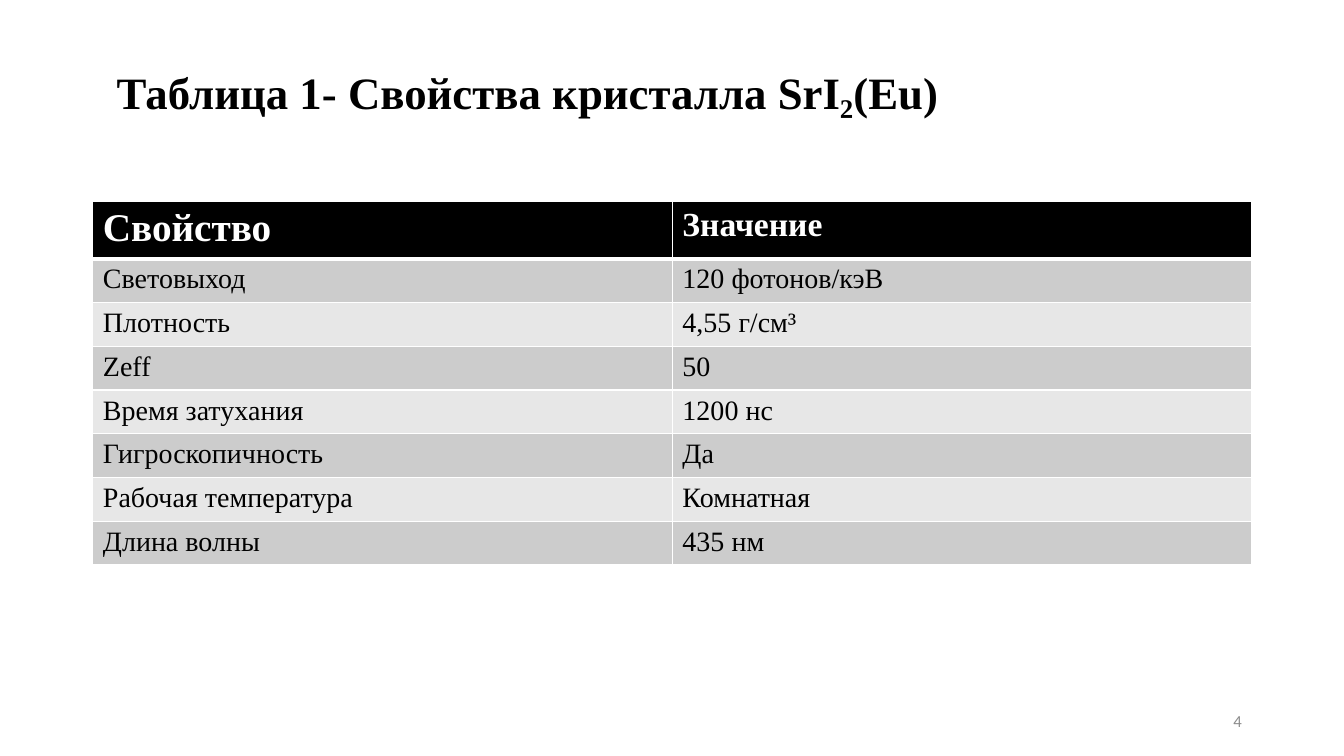
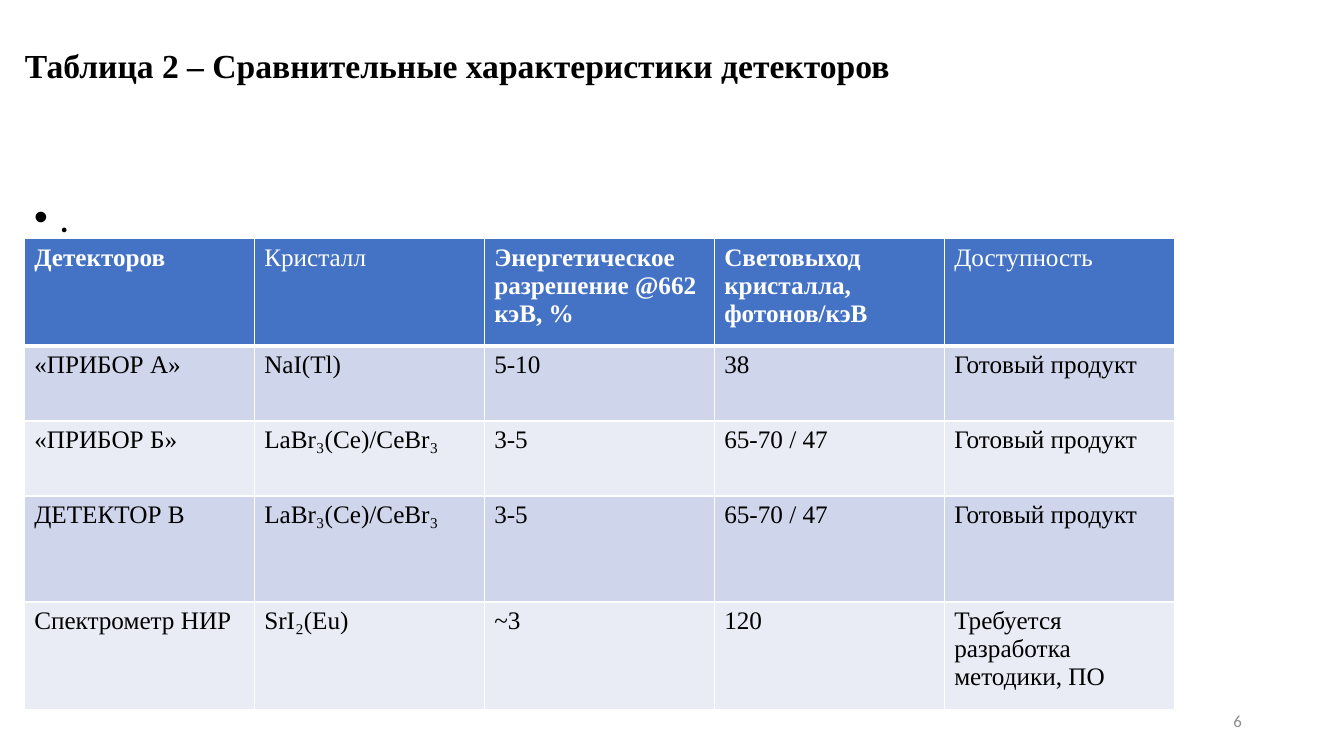
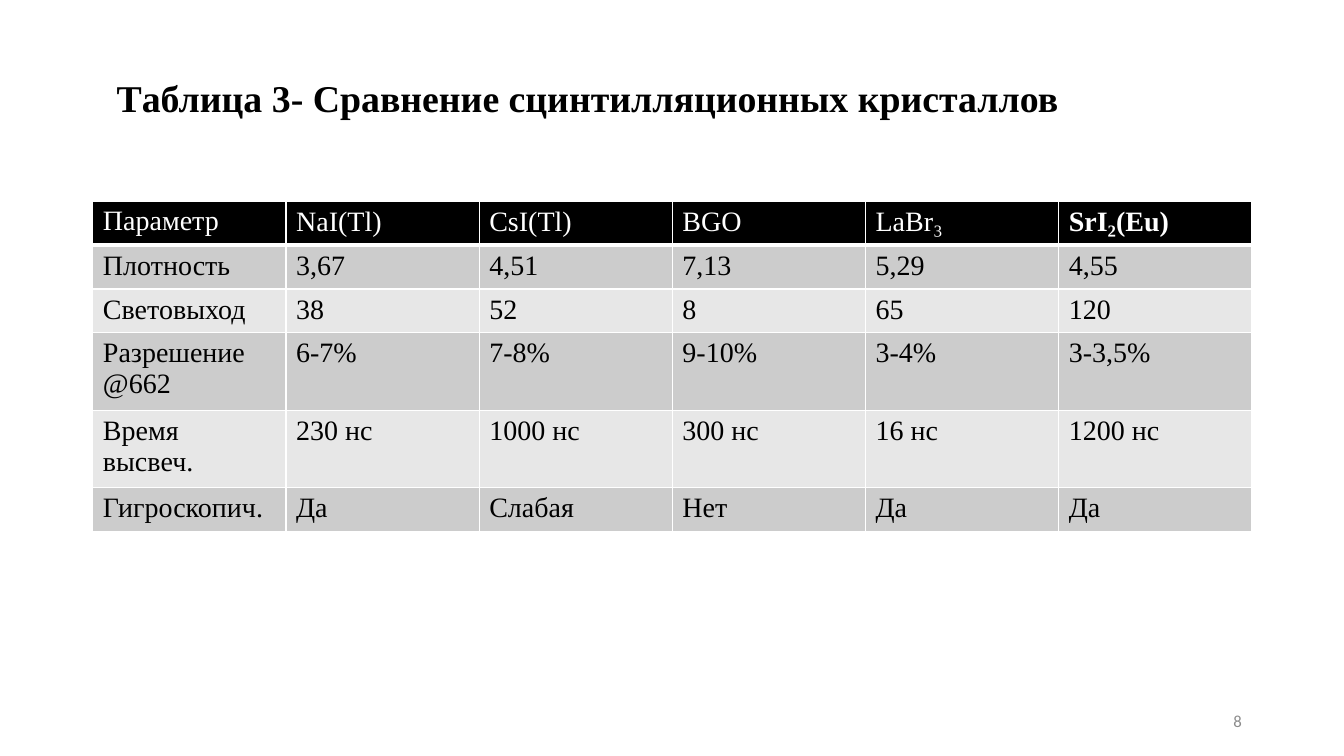
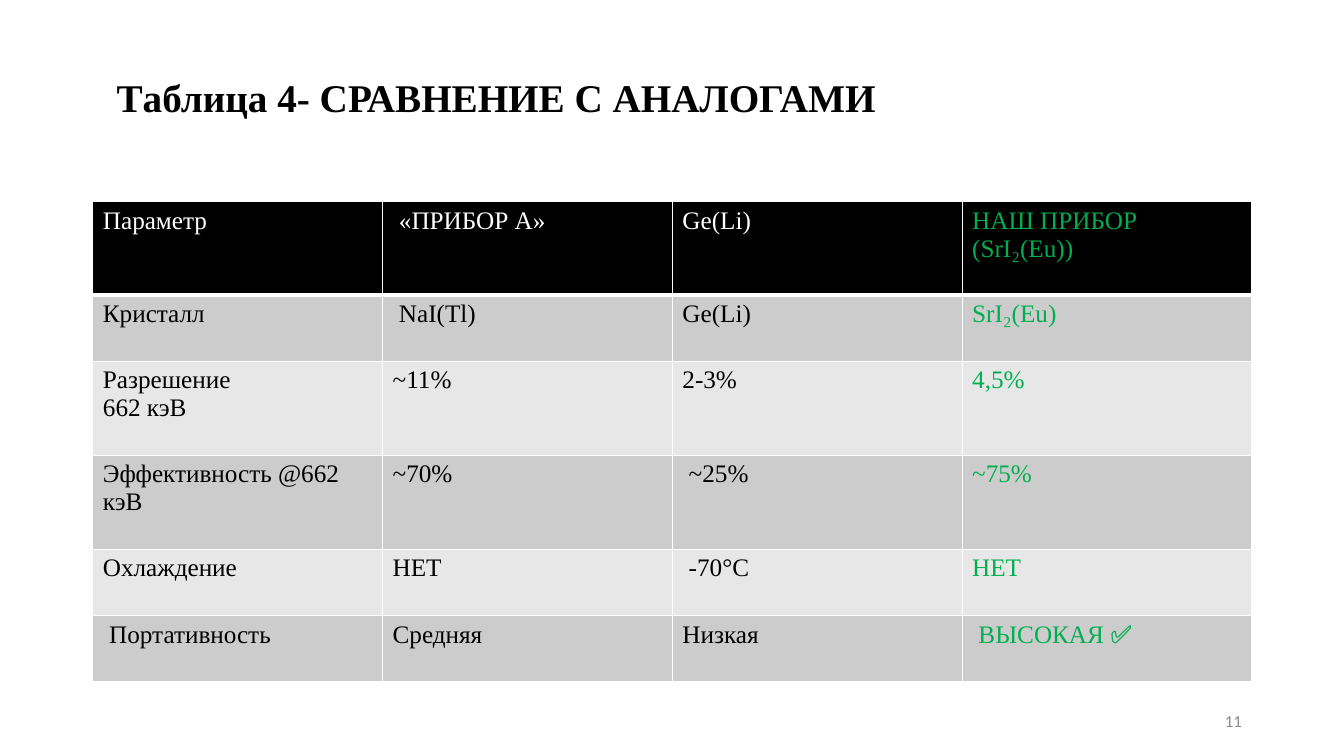
from dataclasses import dataclass

from lxml import etree
from pptx import Presentation
from pptx.dml.color import RGBColor
from pptx.enum.text import MSO_ANCHOR, PP_ALIGN
from pptx.oxml.ns import qn
from pptx.util import Cm, Pt

MIDDLE = MSO_ANCHOR.MIDDLE
TOP = MSO_ANCHOR.TOP
RIGHT = PP_ALIGN.RIGHT
BLANK_LAYOUT = 6


@dataclass(frozen=True)
class Theme:
    serif: str = "Times New Roman"
    sans: str = "Calibri"
    ink: str = "000000"
    paper: str = "FFFFFF"
    muted: str = "8C8C8C"
    accent: str = "00B050"
    body_size: int = 28
    number_size: int = 12
    thin_line: int = 1
    header_line: int = 3


@dataclass(frozen=True)
class Palette:
    header: str
    odd: str
    even: str


@dataclass(frozen=True)
class Box:
    left: float
    top: float
    width: float
    height: float

    def lengths(self):
        return Cm(self.left), Cm(self.top), Cm(self.width), Cm(self.height)


@dataclass(frozen=True)
class TableDesign:
    palette: Palette
    size: int
    row_heights: tuple
    header_sizes: tuple = ()
    bold_headers: tuple = ()
    accent_column: int = -1


THEME = Theme()
GREY = Palette("000000", "CCCCCC", "E7E7E7")
BLUE = Palette("4472C4", "CFD5EA", "E9EBF5")
TITLE_BOX = Box(2.34, 1.02, 29.21, 3.68)
TABLE_BOX = Box(2.34, 5.08, 29.21, 0)
NUMBER_BOX = Box(23.93, 17.65, 7.62, 1.02)


# Text helpers
def add_run(paragraph, text, size, color=THEME.ink, font=THEME.serif, bold=False):
    run = paragraph.add_run()
    run.text = text
    run.font.name = font
    run.font.size = Pt(size)
    run.font.bold = bold
    run.font.color.rgb = RGBColor.from_string(color)


def add_text_box(slide, box, anchor):
    frame = slide.shapes.add_textbox(*box.lengths()).text_frame
    frame.word_wrap = True
    frame.vertical_anchor = anchor
    return frame


# Shared regions
def add_title(slide, text, size, bottom_inset, box=TITLE_BOX, left_inset=0.6):
    frame = add_text_box(slide, box, MIDDLE)
    frame.margin_left = Cm(left_inset)
    frame.margin_bottom = Cm(bottom_inset)
    add_run(frame.paragraphs[0], text, size, bold=True)


def add_slide_number(slide, number):
    frame = add_text_box(slide, NUMBER_BOX, MIDDLE)
    paragraph = frame.paragraphs[0]
    paragraph.alignment = RIGHT
    add_run(paragraph, str(number), THEME.number_size, THEME.muted, THEME.sans)


def add_bullet(slide, text, box):
    paragraph = add_text_box(slide, box, TOP).paragraphs[0]
    properties = paragraph._p.get_or_add_pPr()
    properties.set("marL", str(Cm(0.64)))
    properties.set("indent", str(-Cm(0.64)))
    etree.SubElement(properties, qn("a:buFont"), typeface="Arial")
    etree.SubElement(properties, qn("a:buChar"), char="•")
    paragraph.line_spacing = 0.9
    add_run(paragraph, text, THEME.body_size, font=THEME.sans)


# Tables
def set_borders(cell, row):
    properties = cell._tc.get_or_add_tcPr()
    widths = {
        "lnL": THEME.thin_line,
        "lnR": THEME.thin_line,
        "lnT": THEME.header_line if row == 1 else THEME.thin_line,
        "lnB": THEME.header_line if row == 0 else THEME.thin_line,
    }
    for side, width in widths.items():
        line = etree.SubElement(properties, qn("a:" + side), w=str(Pt(width)))
        fill = etree.SubElement(line, qn("a:solidFill"))
        etree.SubElement(fill, qn("a:srgbClr"), val=THEME.paper)


def fill_cell(cell, text, row, column, design):
    is_header = row == 0
    palette = design.palette
    set_borders(cell, row)
    background = palette.header if is_header else (palette.even, palette.odd)[row % 2]
    cell.fill.solid()
    cell.fill.fore_color.rgb = RGBColor.from_string(background)

    size = design.header_sizes[column] if is_header and design.header_sizes else design.size
    color = THEME.paper if is_header else THEME.ink
    if column == design.accent_column:
        color = THEME.accent
    bold = is_header and column in design.bold_headers
    frame = cell.text_frame
    for index, line in enumerate(text.split("\n")):
        paragraph = frame.add_paragraph() if index else frame.paragraphs[0]
        add_run(paragraph, line, size, color, bold=bold)


def add_data_table(slide, rows, design, box=TABLE_BOX):
    left, top, width, _ = box.lengths()
    height = Cm(sum(design.row_heights))
    column_count = len(rows[0])
    table = slide.shapes.add_table(
        len(rows), column_count, left, top, width, height).table
    table.first_row = False
    table.horz_banding = False
    for column in table.columns:
        column.width = width // column_count
    for row, values in enumerate(rows):
        table.rows[row].height = Cm(design.row_heights[row])
        for column, text in enumerate(values):
            fill_cell(table.cell(row, column), text, row, column, design)
    return table


# Slides
def build_properties(slide):
    add_title(slide, "Таблица 1- Свойства кристалла SrI₂(Eu)", 32, 1.22)
    rows = [
        ("Свойство", "Значение"),
        ("Световыход", "120 фотонов/кэВ"),
        ("Плотность", "4,55 г/см³"),
        ("Zeff", "50"),
        ("Время затухания", "1200 нс"),
        ("Гигроскопичность", "Да"),
        ("Рабочая температура", "Комнатная"),
        ("Длина волны", "435 нм"),
    ]
    heights = (1.34,) + (1.03,) * 7
    add_data_table(slide, rows, TableDesign(
        GREY, 20, heights, header_sizes=(28, 24), bold_headers=(0, 1)))
    add_slide_number(slide, 4)


def build_detectors(slide):
    add_title(slide, "Таблица 2 – Сравнительные характеристики детекторов", 24, 2.03,
              Box(0.38, 0.74, 29.21, 3.68), left_inset=0.25)
    add_bullet(slide, ".", Box(0.61, 4.88, 31.57, 13.77))
    rows = [
        ("Детекторов", "Кристалл", "Энергетическое разрешение @662 кэВ, %",
         "Световыход кристалла, фотонов/кэВ", "Доступность"),
        ("«ПРИБОР А»", "NaI(Tl)", "5-10", "38", "Готовый продукт"),
        ("«ПРИБОР Б»", "LaBr₃(Ce)/CeBr₃", "3-5", "65-70 / 47", "Готовый продукт"),
        ("ДЕТЕКТОР В", "LaBr₃(Ce)/CeBr₃", "3-5", "65-70 / 47", "Готовый продукт"),
        ("Спектрометр НИР", "SrI₂(Eu)", "~3", "120", "Требуется разработка методики, ПО"),
    ]
    add_data_table(slide, rows, TableDesign(
        BLUE, 18, (2.7, 1.89, 1.89, 2.67, 2.7), bold_headers=(0, 2, 3)),
        Box(0.61, 6.02, 28.98, 0))
    add_slide_number(slide, 6)


def build_crystals(slide):
    add_title(slide, "Tаблица 3- Сравнение сцинтилляционных кристаллов", 27, 0.92)
    rows = [
        ("Параметр", "NaI(Tl)", "CsI(Tl)", "BGO", "LaBr₃", "SrI₂(Eu)"),
        ("Плотность", "3,67", "4,51", "7,13", "5,29", "4,55"),
        ("Световыход", "38", "52", "8", "65", "120"),
        ("Разрешение @662", "6-7%", "7-8%", "9-10%", "3-4%", "3-3,5%"),
        ("Время высвеч.", "230 нс", "1000 нс", "300 нс", "16 нс", "1200 нс"),
        ("Гигроскопич.", "Да", "Слабая", "Нет", "Да", "Да"),
    ]
    table = add_data_table(slide, rows, TableDesign(
        GREY, 20, (1.04, 1.04, 1.04, 1.83, 1.83, 1.04), bold_headers=(5,)))
    corner = table.cell(0, 0)
    corner.vertical_anchor = MIDDLE
    corner.margin_top = corner.margin_bottom = Cm(0.2)
    corner.text_frame.paragraphs[0].line_spacing = Pt(18.8)
    add_slide_number(slide, 8)


def build_analogues(slide):
    add_title(slide, "Tаблица 4- СРАВНЕНИЕ С АНАЛОГАМИ", 28, 0.97)
    rows = [
        ("Параметр", " «ПРИБОР А»", "Ge(Li)", "HАШ ПРИБОР (SrI₂(Eu))"),
        ("Кристалл", " NaI(Tl)", "Ge(Li)", "SrI₂(Eu)"),
        ("Разрешение\n662 кэВ", "~11%", "2-3%", "4,5%"),
        ("Эффективность @662 кэВ", "~70%", " ~25%", "~75%"),
        ("Охлаждение", "НЕТ", " -70°C", "НЕТ"),
        (" Портативность", "Средняя", "Низкая", " ВЫСОКАЯ ✅"),
    ]
    add_data_table(slide, rows, TableDesign(
        GREY, 18, (2.35, 1.67, 2.37, 2.37, 1.67, 1.67), accent_column=3))
    add_slide_number(slide, 11)


def main():
    presentation = Presentation()
    presentation.slide_width = Cm(33.87)
    presentation.slide_height = Cm(19.05)
    layout = presentation.slide_layouts[BLANK_LAYOUT]
    for build in (build_properties, build_detectors, build_crystals, build_analogues):
        build(presentation.slides.add_slide(layout))
    presentation.save("out.pptx")


if __name__ == "__main__":
    main()
